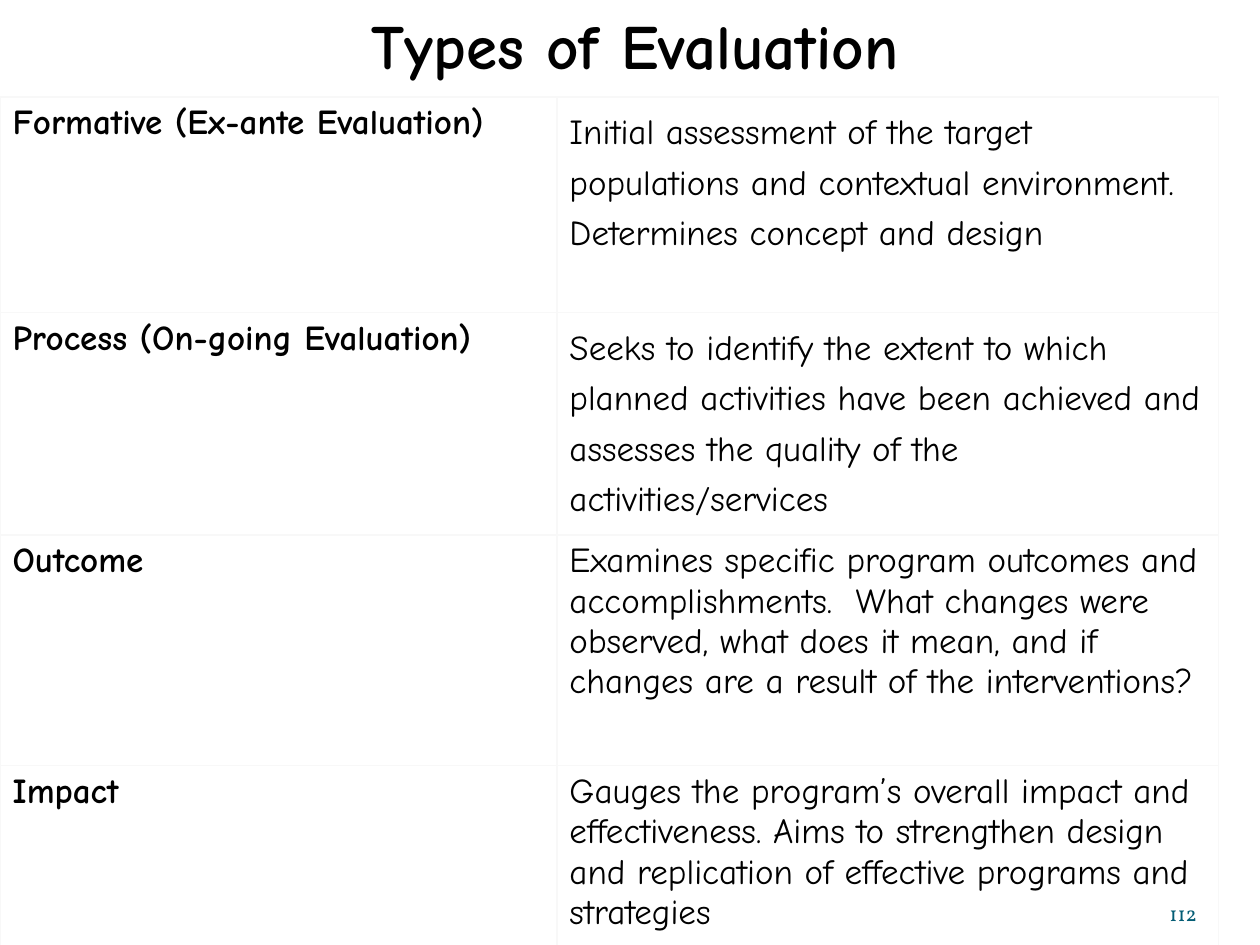
from lxml.etree import SubElement
from pptx import Presentation
from pptx.dml.color import RGBColor
from pptx.enum.text import MSO_ANCHOR as Anchor, PP_ALIGN as Align
from pptx.oxml.ns import qn
from pptx.util import Inches, Pt

COLORS = {"text": "000000", "border": "F8F8F8", "number": "045D75"}

EVALUATIONS = [
    ("Formative (Ex-ante Evaluation)",
     "Initial assessment of the target populations and contextual environment. "
     "Determines concept and design", 1.71, 1.25),
    ("Process (On-going Evaluation)",
     "Seeks to identify the extent to which planned activities have been achieved "
     "and assesses the quality of the activities/services", 1.71, 1.25),
    ("Outcome",
     "Examines specific program outcomes and accomplishments.  What changes were "
     "observed, what does it mean, and if changes are a result of the interventions?",
     1.83, 1),
    ("Impact",
     "Gauges the program’s overall impact and effectiveness. Aims to strengthen "
     "design and replication of effective programs and strategies", 1.42, 1),
]


class SlideBuilder:
    font = "Comic Neue"

    def __init__(self, slide):
        self.slide = slide

    def set_text(self, text_frame, text, size, color="text", bold=False, font=None,
                 align=Align.LEFT, spacing=1):
        text_frame.text = text
        paragraph = text_frame.paragraphs[0]
        paragraph.alignment = align
        paragraph.line_spacing = spacing
        run_font = paragraph.runs[0].font
        run_font.name = font or self.font
        run_font.size = Pt(size)
        run_font.bold = bold
        run_font.color.rgb = RGBColor.from_string(COLORS[color])

    def text_box(self, left, top, width, height, text, size, anchor=Anchor.TOP,
                 margin=None, **style):
        shape = self.slide.shapes.add_textbox(
            Inches(left), Inches(top), Inches(width), Inches(height))
        text_frame = shape.text_frame
        text_frame.word_wrap = True
        text_frame.vertical_anchor = anchor
        if margin is not None:
            text_frame.margin_left = text_frame.margin_right = Inches(margin)
            text_frame.margin_top = text_frame.margin_bottom = Inches(margin)
        self.set_text(text_frame, text, size, **style)

    def border(self, cell, open_bottom):
        properties = cell._tc.get_or_add_tcPr()
        for side in "LRTB":
            line = SubElement(properties, qn(f"a:ln{side}"), w=str(Pt(1)))
            if side == "B" and open_bottom:
                SubElement(line, qn("a:noFill"))
            else:
                fill = SubElement(line, qn("a:solidFill"))
                SubElement(fill, qn("a:srgbClr"), val=COLORS["border"])

    def table(self, left, top, widths, rows, size):
        height = sum(row[2] for row in rows)
        table = self.slide.shapes.add_table(
            len(rows), len(widths), Inches(left), Inches(top),
            Inches(sum(widths)), Inches(height)).table
        table.first_row = table.horz_banding = False
        for column, width in zip(table.columns, widths):
            column.width = Inches(width)
        for index, (name, description, row_height, spacing) in enumerate(rows):
            table.rows[index].height = Inches(row_height)
            name_cell, description_cell = table.rows[index].cells
            self.set_text(name_cell.text_frame, name, size, bold=True)
            self.set_text(description_cell.text_frame, description, size, spacing=spacing)
            for cell in (name_cell, description_cell):
                self.border(cell, open_bottom=index == len(rows) - 1)
                cell.fill.background()


def main():
    presentation = Presentation()
    presentation.slide_width = Inches(10)
    presentation.slide_height = Inches(7.5)
    builder = SlideBuilder(presentation.slides.add_slide(presentation.slide_layouts[6]))
    builder.text_box(0.83, 0, 8.42, 0.75, "Types of Evaluation", 36,
                     bold=True, align=Align.CENTER)
    builder.table(0, 0.77, [4.42, 5.25], EVALUATIONS, 20)
    builder.text_box(8.67, 6.95, 0.83, 0.4, "112", 12, anchor=Anchor.BOTTOM, margin=0,
                     color="number", font="Vollkorn", align=Align.RIGHT)
    presentation.save("out.pptx")


if __name__ == "__main__":
    main()
